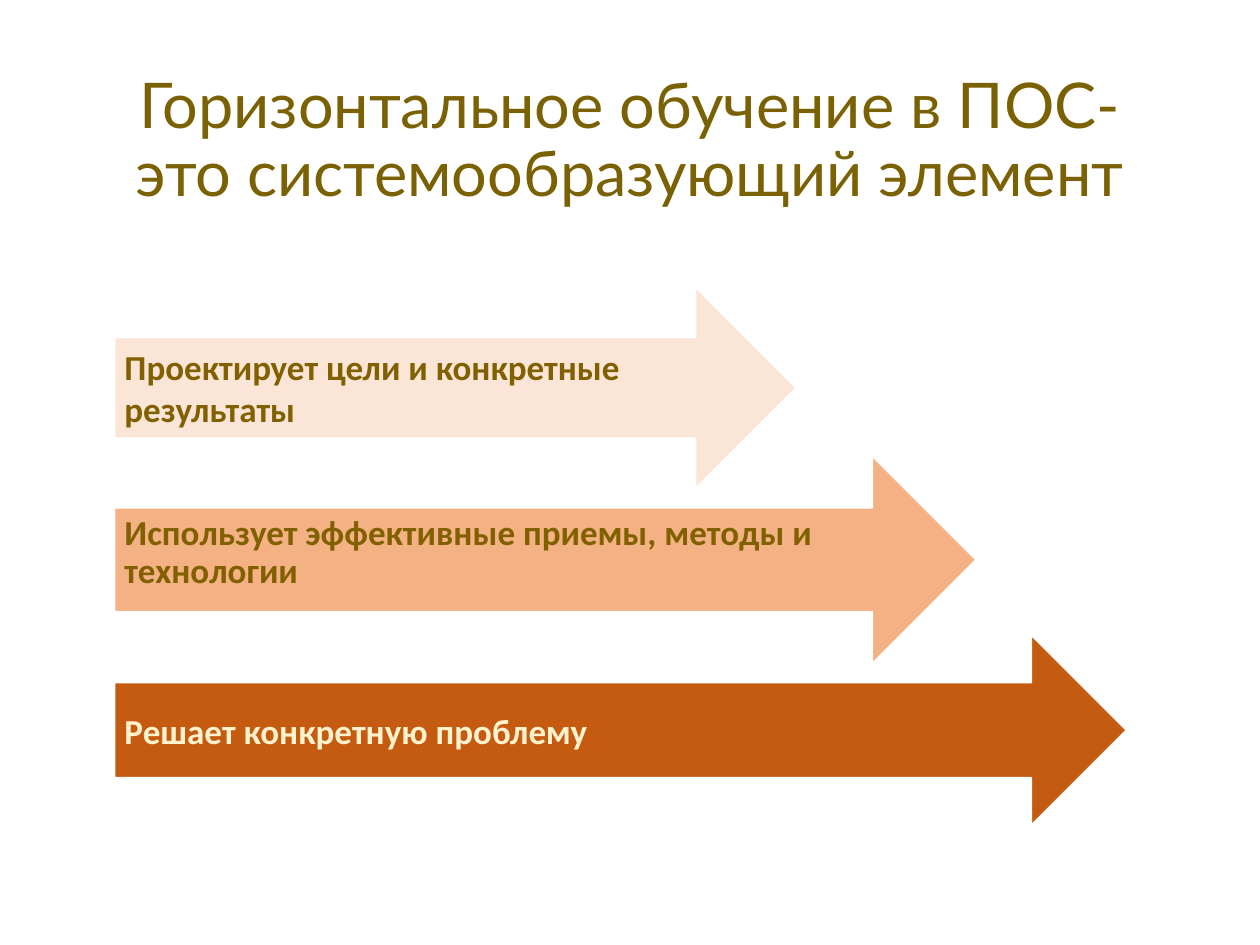
from pptx import Presentation, util as u
from pptx.dml.color import RGBColor
from pptx.enum import shapes, text

COLORS = {
    "title": "7A6104", "dark": "806000", "cream": "FFF2CC", "white": "FFFFFF",
    "pale": "FBE5D6", "peach": "F4B183", "rust": "C55A11",
}


class Deck:
    """Holds the style and the current slide, and adds its elements."""

    title_font, body_font = "Lato", "Calibri"
    left = 2.31

    def __init__(self):
        self.prs = Presentation()
        self.prs.slide_width, self.prs.slide_height = u.Cm(25.4), u.Cm(19.05)
        self.s = self.prs.slides.add_slide(self.prs.slide_layouts[5])

    def color(self, name):
        return RGBColor.from_string(COLORS[name])

    def add_text(self, tf, words, font, size, color, align, spacing, bold=False):
        tf.word_wrap = True
        tf.auto_size = text.MSO_AUTO_SIZE.NONE
        tf.vertical_anchor = text.MSO_ANCHOR.MIDDLE
        p = tf.paragraphs[0]
        p.alignment, p.line_spacing = align, spacing
        r = p.add_run()
        r.text = words
        r.font.name, r.font.size, r.font.bold = font, u.Pt(size), bold
        r.font.color.rgb = self.color(color)

    def title(self, words):
        sp = self.s.shapes.title
        sp.left, sp.top, sp.width, sp.height = map(u.Cm, (1.75, 1.02, 21.9, 3.68))
        self.add_text(sp.text_frame, words, self.title_font, 36, "title",
                      text.PP_ALIGN.CENTER, 0.9)

    def arrow(self, top, width, height, fill, words, color, spacing, bottom):
        sp = self.s.shapes.add_shape(
            shapes.MSO_SHAPE.RIGHT_ARROW,
            *map(u.Cm, (self.left, top, width, height)))
        sp.shadow.inherit = False
        sp.fill.solid()
        sp.fill.fore_color.rgb = self.color(fill)
        sp.line.color.rgb = self.color("white")
        sp.line.width = u.Pt(1)
        tf = sp.text_frame
        tf.margin_left = tf.margin_top = u.Cm(0.2)
        tf.margin_right, tf.margin_bottom = u.Cm(0.71), u.Cm(bottom)
        self.add_text(tf, words, self.body_font, 20, color,
                      text.PP_ALIGN.LEFT, spacing, True)


def main():
    deck = Deck()
    deck.title("Горизонтальное обучение в ПОС- это системообразующий элемент")
    for row in (
        (5.79, 13.74, 4.06, "pale",
         "Проектирует цели и конкретные результаты", "dark", 1.0, 0.2),
        (9.19, 17.37, 4.19, "peach",
         "Использует эффективные приемы, методы и технологии", "dark", 0.9, 0.48),
        (12.8, 20.4, 3.84, "rust",
         "Решает конкретную проблему", "cream", 1.0, 0.2),
    ):
        deck.arrow(*row)
    deck.prs.save("out.pptx")


if __name__ == "__main__":
    main()
